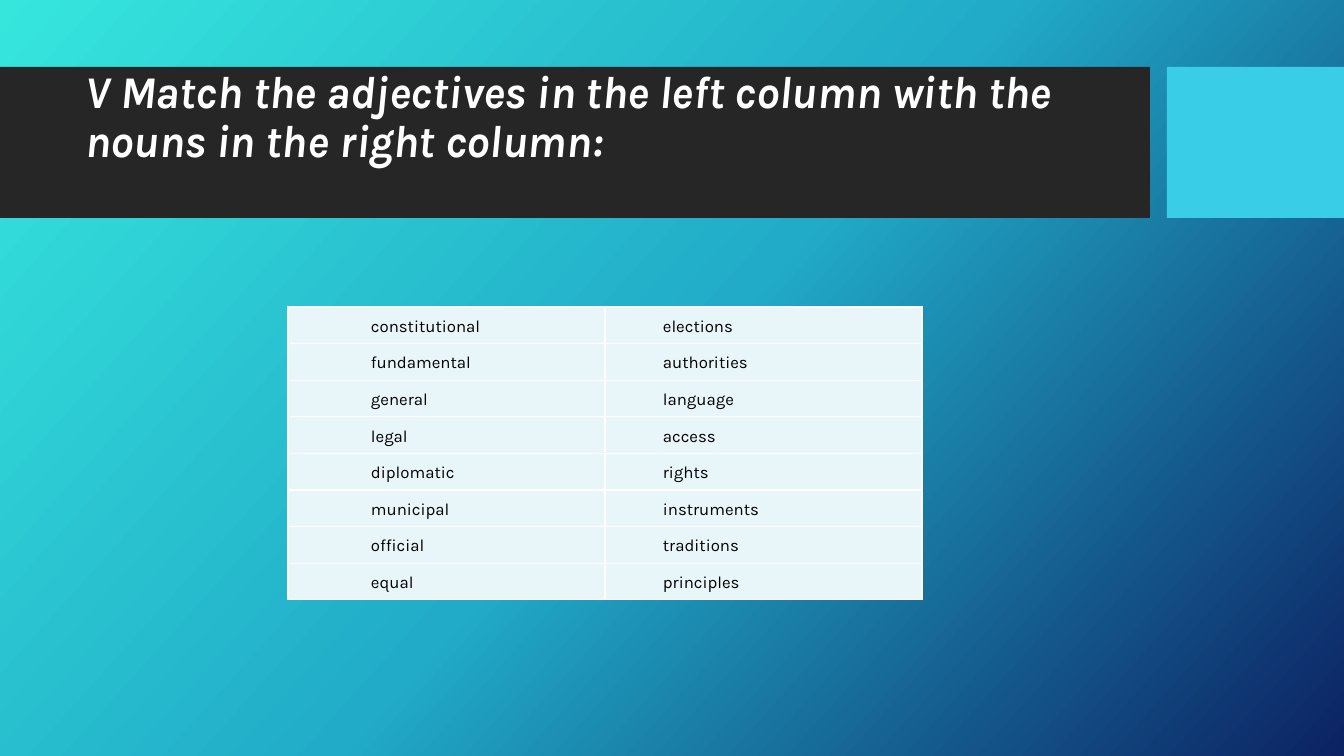
import copy

import pptx
import pptx.dml.color
import pptx.enum.shapes
import pptx.enum.text
import pptx.oxml.ns
import pptx.oxml.xmlchemy
import pptx.util
from lxml import etree

PX_PER_INCH = 100.8
FONT = "Karla"
WORD_PAIRS = [
    ("constitutional", "elections"),
    ("fundamental", "authorities"),
    ("general", "language"),
    ("legal", "access"),
    ("diplomatic", "rights"),
    ("municipal", "instruments"),
    ("official", "traditions"),
    ("equal", "principles"),
]


def px(length):
    return pptx.util.Emu(round(length * 914400 / PX_PER_INCH))


def colour(code):
    return pptx.dml.color.RGBColor.from_string(code)


def set_font(para, size, code, bold=False, italic=False):
    font = para.font
    font.name, font.size = FONT, pptx.util.Pt(size)
    font.bold, font.italic = bold, italic
    font.color.rgb = colour(code)


def paint_background(page):
    fill = page.background.fill
    fill.gradient()
    fill.gradient_angle = 318
    first = next(page.background._cSld.iter(pptx.oxml.ns.qn("a:gs")))
    first.addnext(copy.deepcopy(first))
    stops = [(0, "36E6DD"), (0.5, "21ABC8"), (1, "0C2263")]
    for stop, (position, code) in zip(fill.gradient_stops, stops):
        stop.position = position
        stop.color.rgb = colour(code)


def add_block(page, left, top, width, height, code):
    block = page.shapes.add_shape(
        pptx.enum.shapes.MSO_SHAPE.RECTANGLE, px(left), px(top), px(width), px(height))
    block.shadow.inherit = False
    block.fill.solid()
    block.fill.fore_color.rgb = colour(code)
    block.line.fill.background()


def add_header(page, left, top, width, height):
    # Dark band and bright end block
    band_width, gap = 1150, 17
    add_block(page, left, top, band_width, height, "262626")
    add_block(page, left + band_width + gap, top, width - band_width - gap, height, "39CDE7")

    # Title, brought in front of the band
    title = page.shapes.title
    page.shapes._spTree.append(title._element)
    title.left, title.top = px(left + 75), px(top + 16)
    title.width, title.height = px(1059), px(119)
    frame = title.text_frame
    frame.word_wrap = True
    frame.auto_size = pptx.enum.text.MSO_AUTO_SIZE.NONE
    frame.vertical_anchor = pptx.enum.text.MSO_ANCHOR.MIDDLE
    frame.margin_bottom = px(53)
    frame.text = "V Match the adjectives in the left column with the nouns in the right column:"
    para = frame.paragraphs[0]
    para.alignment = pptx.enum.text.PP_ALIGN.LEFT
    para.line_spacing = 0.9
    set_font(para, 32.4, "FFFFFF", bold=True, italic=True)


def set_borders(cell, code, points):
    properties = cell._tc.get_or_add_tcPr()
    qn = pptx.oxml.ns.qn
    for index, side in enumerate(("lnL", "lnR", "lnT", "lnB")):
        line = etree.Element(qn(f"a:{side}"), w=str(pptx.util.Pt(points)))
        fill = etree.SubElement(line, qn("a:solidFill"))
        etree.SubElement(fill, qn("a:srgbClr"), val=code)
        properties.insert(index, line)


def fill_cell(cell, word, indent):
    cell.fill.solid()
    cell.fill.fore_color.rgb = colour("E8F6FA")
    set_borders(cell, "FFFFFF", 1)
    cell.margin_left = cell.margin_right = cell.margin_top = cell.margin_bottom = px(7)
    cell.text = word
    para = cell.text_frame.paragraphs[0]
    para.line_spacing = 1.15
    properties = para._p.get_or_add_pPr()
    properties.set("marL", str(px(indent)))
    properties.set("indent", str(px(-25)))
    set_font(para, 12, "000000")


def add_word_table(page, left, top, width, row_height):
    row_count = len(WORD_PAIRS)
    table = page.shapes.add_table(
        row_count, 2, px(left), px(top), px(width), px(row_height * row_count)).table
    table.first_row = table.horz_banding = False
    for row, pair in enumerate(WORD_PAIRS):
        for column, (word, indent) in enumerate(zip(pair, (101, 76))):
            fill_cell(table.cell(row, column), word, indent)


def main():
    deck = pptx.Presentation()
    deck.slide_width, deck.slide_height = px(1344), px(756)
    page = deck.slides.add_slide(deck.slide_layouts.get_by_name("Title Only"))
    paint_background(page)
    add_header(page, 0, 67, 1344, 151)
    add_word_table(page, 288, 307, 634, 36)
    deck.save("out.pptx")


if __name__ == "__main__":
    main()
